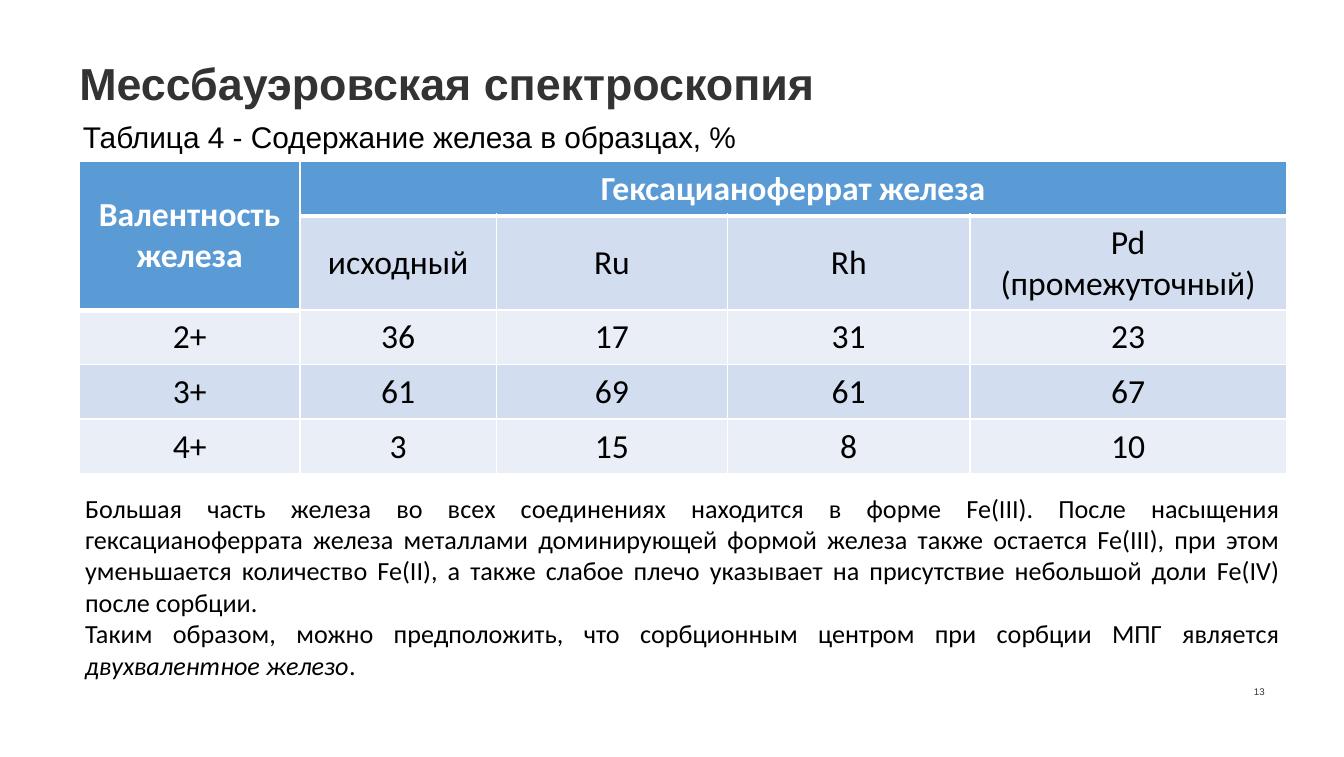
from pptx import Presentation
from pptx.dml.color import RGBColor
from pptx.enum.text import MSO_ANCHOR, PP_ALIGN
from pptx.oxml import parse_xml
from pptx.oxml.ns import nsdecls
from pptx.util import Cm, Pt

HEADER, BAND, LIGHT = "5B9BD5", "D2DEEF", "EAEFF7"
WHITE, BLACK, GREY = "FFFFFF", "000000", "333333"
THIN, THICK = Pt(1), Pt(3)

COLUMN_WIDTHS = [4.17, 3.71, 4.37, 4.58, 5.98]
ROW_HEIGHTS = [1.03, 1.76, 1.03, 1.03, 1.03]
ROWS = [
    ["Валентность железа", "Гексацианоферрат железа", "", "", ""],
    ["", "исходный", "Ru", "Rh", "Pd (промежуточный)"],
    ["2+", "36", "17", "31", "23"],
    ["3+", "61", "69", "61", "67"],
    ["4+", "3", "15", "8", "10"],
]
CONCLUSIONS = [
    [("Большая часть железа во всех соединениях находится в форме Fe(III). "
      "После насыщения гексацианоферрата железа металлами доминирующей формой "
      "железа также остается Fe(III), при этом уменьшается количество Fe(II), "
      "а также слабое плечо указывает на присутствие небольшой доли Fe(IV) "
      "после сорбции.", False)],
    [("Таким образом, можно предположить, что сорбционным центром при сорбции "
      "МПГ является ", False), ("двухвалентное железо", True), (".", False)],
]


def color(value):
    """Turn a hex string into a colour."""
    return RGBColor.from_string(value)


def add_text(para, text, *, size, font="Calibri", fill=BLACK, bold=False,
             italic=False, align=PP_ALIGN.LEFT):
    """Append a formatted span to a paragraph."""
    para.alignment = align
    span = para.add_run()
    span.text = text
    span.font.name = font
    span.font.size = Pt(size)
    span.font.bold = bold
    span.font.italic = italic
    span.font.color.rgb = color(fill)


def clear_margins(frame):
    """Remove the inner margins of a text frame."""
    frame.margin_left = frame.margin_right = 0
    frame.margin_top = frame.margin_bottom = 0


def add_box(page, left, top, width, height, wrap=True):
    """Add a text box and return its text frame."""
    box = page.shapes.add_textbox(Cm(left), Cm(top), Cm(width), Cm(height))
    box.text_frame.word_wrap = wrap
    return box.text_frame


def set_title(page, text):
    """Place and format the title placeholder."""
    title = page.shapes.title
    title.left, title.top, title.width, title.height = Cm(1.5), Cm(1.13), Cm(15.47), Cm(0.97)
    frame = title.text_frame
    clear_margins(frame)
    frame.vertical_anchor = MSO_ANCHOR.MIDDLE
    para = frame.paragraphs[0]
    para.line_spacing = 0.9
    add_text(para, text, size=24, font="Arial", fill=GREY, bold=True)


def set_borders(cell, top, bottom):
    """Draw white cell borders with the given top and bottom widths."""
    properties = cell._tc.get_or_add_tcPr()
    for side, width in (("L", THIN), ("R", THIN), ("T", top), ("B", bottom)):
        properties.append(parse_xml(
            f'<a:ln{side} {nsdecls("a")} w="{width}"><a:solidFill>'
            f'<a:srgbClr val="{WHITE}"/></a:solidFill></a:ln{side}>'))


def format_cell(cell, text, row, column):
    """Fill, border and write one table cell."""
    header = row == 0 or (row == 1 and column == 0)
    last_header_row = 1 if column == 0 else 0
    set_borders(cell, THICK if row == last_header_row + 1 else THIN,
                THICK if row == last_header_row else THIN)
    cell.fill.solid()
    cell.fill.fore_color.rgb = color(HEADER if header else BAND if row % 2 else LIGHT)
    cell.vertical_anchor = MSO_ANCHOR.MIDDLE
    if text:
        add_text(cell.text_frame.paragraphs[0], text, size=18, bold=header,
                 fill=WHITE if header else BLACK, align=PP_ALIGN.CENTER)


def add_iron_table(page):
    """Add the table of iron content by valence."""
    table = page.shapes.add_table(
        len(ROWS), len(COLUMN_WIDTHS), Cm(1.5), Cm(3.05),
        Cm(sum(COLUMN_WIDTHS)), Cm(sum(ROW_HEIGHTS))).table
    for column, width in zip(table.columns, COLUMN_WIDTHS):
        column.width = Cm(width)
    for row, height in zip(table.rows, ROW_HEIGHTS):
        row.height = Cm(height)
    table.cell(0, 0).merge(table.cell(1, 0))
    table.cell(0, 1).merge(table.cell(0, 4))
    for row, texts in enumerate(ROWS):
        for column, text in enumerate(texts):
            format_cell(table.cell(row, column), text, row, column)


def add_conclusions(page):
    """Add the justified paragraphs below the table."""
    frame = add_box(page, 1.36, 9.17, 23.09, 3.84)
    for index, spans in enumerate(CONCLUSIONS):
        para = frame.add_paragraph() if index else frame.paragraphs[0]
        for text, italic in spans:
            add_text(para, text, size=14, italic=italic, align=PP_ALIGN.JUSTIFY)


def add_page_number(page, number):
    """Add the small page number at the lower right."""
    frame = add_box(page, 22.3, 12.88, 1.6, 0.3)
    clear_margins(frame)
    frame.vertical_anchor = MSO_ANCHOR.BOTTOM
    add_text(frame.paragraphs[0], number, size=5.2, font="Arial", fill=GREY,
             align=PP_ALIGN.RIGHT)


def main():
    """Build the slide and save the deck."""
    deck = Presentation()
    deck.slide_width, deck.slide_height = Cm(25.4), Cm(14.3)
    page = deck.slides.add_slide(deck.slide_layouts[5])
    set_title(page, "Мессбауэровская спектроскопия")
    caption = add_box(page, 1.14, 2.11, 13.03, 0.94, wrap=False)
    add_text(caption.paragraphs[0], "Таблица 4 - Содержание железа в образцах, %",
             size=16, font="Arial", align=PP_ALIGN.RIGHT)
    add_iron_table(page)
    add_conclusions(page)
    add_page_number(page, "13")
    deck.save("out.pptx")


if __name__ == "__main__":
    main()
